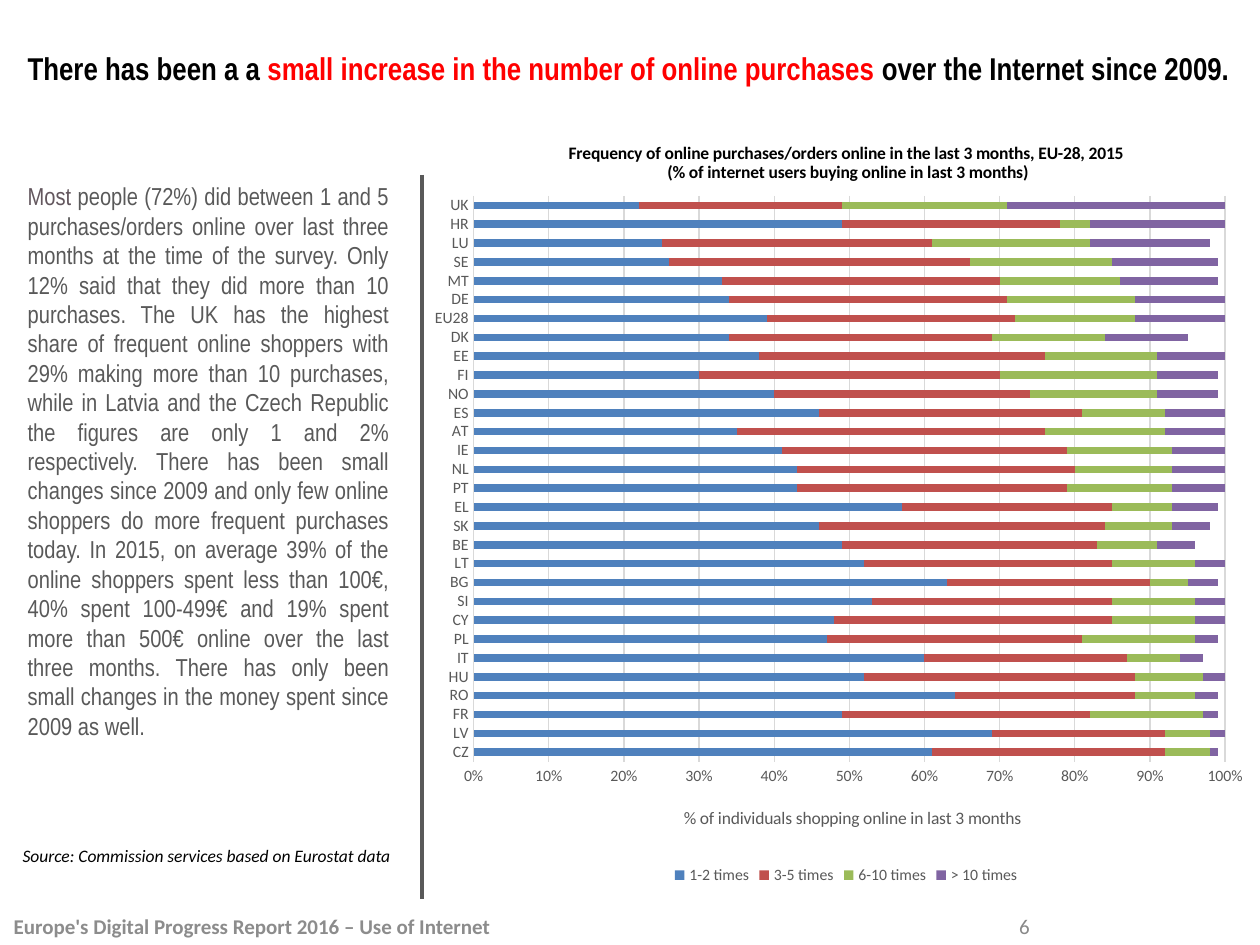
import pptx
import pptx.chart.data
import pptx.dml.color
import pptx.enum.chart
import pptx.enum.shapes
import pptx.enum.text
import pptx.oxml
import pptx.oxml.ns
import pptx.util

Pt = pptx.util.Pt
qn = pptx.oxml.ns.qn
Align = pptx.enum.text.PP_ALIGN
Anchor = pptx.enum.text.MSO_ANCHOR

COLORS = {
    "black": "000000", "red": "FF0000", "warm": "63575E", "text": "595959",
    "grid": "D9D9D9", "foot": "8C8C8C", "page": "898989",
    "blue": "4F81BD", "brick": "C0504D", "green": "9BBB59", "plum": "8064A2",
}
NARROW, PLAIN = "Arial Narrow", "Calibri"

TITLE = [
    ("There has been a a ", "black"),
    ("small increase in the number of online purchases ", "red"),
    ("over the Internet since 2009.", "black"),
]
BODY = [
    ("Most", "warm"),
    (" people (72%) did between 1 and 5 purchases/orders online over last three "
     "months at the time of the survey. Only 12% said that they did more than 10 "
     "purchases. The UK has the highest share of frequent online shoppers with 29% "
     "making more than 10 purchases, while in Latvia and the Czech Republic the "
     "figures are only 1 and 2% respectively. There has been small changes since "
     "2009 and only few online shoppers do more frequent purchases today. In 2015, "
     "on average 39% of the online shoppers spent less than 100€, 40% spent "
     "100-499€ and 19% spent more than 500€ online over the last three months. "
     "There has only been small changes in the money spent since 2009 as well.",
     "text"),
]
SOURCE = "Source: Commission services based on Eurostat data"
FOOTER = "Europe's Digital Progress Report 2016 – Use of Internet"
HEADING = ("Frequency of online purchases/orders online in the last 3 months, "
           "EU-28, 2015 \n(% of internet users buying online in last 3 months)")
AXIS = "% of individuals shopping online in last 3 months"

# Country, then the percent of shoppers in each of the four series
SERIES = [("1-2 times", "blue"), ("3-5 times", "brick"),
          ("6-10 times", "green"), ("> 10 times", "plum")]
SHARES = [
    ("CZ", 61, 31, 6, 1), ("LV", 69, 23, 6, 2), ("FR", 49, 33, 15, 2),
    ("RO", 64, 24, 8, 3), ("HU", 52, 36, 9, 3), ("IT", 60, 27, 7, 3),
    ("PL", 47, 34, 15, 3), ("CY", 48, 37, 11, 4), ("SI", 53, 32, 11, 4),
    ("BG", 63, 27, 5, 4), ("LT", 52, 33, 11, 4), ("BE", 49, 34, 8, 5),
    ("SK", 46, 38, 9, 5), ("EL", 57, 28, 8, 6), ("PT", 43, 36, 14, 7),
    ("NL", 43, 37, 13, 7), ("IE", 41, 38, 14, 7), ("AT", 35, 41, 16, 8),
    ("ES", 46, 35, 11, 8), ("NO", 40, 34, 17, 8), ("FI", 30, 40, 21, 8),
    ("EE", 38, 38, 15, 9), ("DK", 34, 35, 15, 11), ("EU28", 39, 33, 16, 12),
    ("DE", 34, 37, 17, 12), ("MT", 33, 37, 16, 13), ("SE", 26, 40, 19, 14),
    ("LU", 25, 36, 21, 16), ("HR", 49, 29, 4, 18), ("UK", 22, 27, 22, 29),
]


def color(name):
    return pptx.dml.color.RGBColor.from_string(COLORS[name])


def style(font, size, shade, face=PLAIN, bold=False, slant=False):
    font.size, font.name, font.bold, font.italic = Pt(size), face, bold, slant
    font.color.rgb = color(shade)


def place(shape, left, top, width, height):
    shape.left, shape.top = Pt(left), Pt(top)
    shape.width, shape.height = Pt(width), Pt(height)


def fill_holder(shape, parts, size, bold, anchor):
    """Write the colored parts as one justified paragraph without a bullet."""
    frame = shape.text_frame
    frame.word_wrap, frame.vertical_anchor = True, anchor
    frame.auto_size = pptx.enum.text.MSO_AUTO_SIZE.NONE
    para = frame.paragraphs[0]
    props = para._p.get_or_add_pPr()
    props.set("marL", "0")
    props.set("indent", "0")
    props.append(pptx.oxml.parse_xml(f'<a:buNone {pptx.oxml.ns.nsdecls("a")}/>'))
    para.alignment, para.space_before = Align.JUSTIFY, Pt(0)
    for text, shade in parts:
        run = para.add_run()
        run.text = text
        style(run.font, size, shade, NARROW, bold)
    return para


def add_label(slide, box, text, wrap=True, align=Align.LEFT,
              anchor=Anchor.MIDDLE, **look):
    frame = slide.shapes.add_textbox(*map(Pt, box)).text_frame
    frame.text = text
    frame.word_wrap, frame.vertical_anchor = wrap, anchor
    frame.paragraphs[0].alignment = align
    style(frame.paragraphs[0].runs[0].font, **look)


def set_layout(parent, index, **parts):
    """Fix a chart part's place, as fractions of the whole chart."""
    for old in parent.findall(qn("c:layout")):
        parent.remove(old)
    inner = '<c:layoutTarget val="inner"/>' if "w" in parts else ""
    modes = "".join(f'<c:{key}Mode val="edge"/>' for key in "xy")
    sizes = "".join(f'<c:{key} val="{val}"/>' for key, val in parts.items())
    parent.insert(index, pptx.oxml.parse_xml(
        f'<c:layout {pptx.oxml.ns.nsdecls("c")}><c:manualLayout>'
        f'{inner}{modes}{sizes}</c:manualLayout></c:layout>'))


def set_title(title, text, x, y, **look):
    title.text_frame.text = text
    for para in title.text_frame.paragraphs:
        for run in para.runs:
            style(run.font, **look)
    set_layout(title._element, 1, x=x, y=y)


def add_bars(slide):
    data = pptx.chart.data.CategoryChartData(number_format="0%")
    data.categories = [row[0] for row in SHARES]
    for col, (name, _) in enumerate(SERIES, 1):
        data.add_series(name, [row[col] / 100 for row in SHARES])
    kinds = pptx.enum.chart
    chart = slide.shapes.add_chart(
        kinds.XL_CHART_TYPE.BAR_STACKED, *map(Pt, (247, 60.5, 473, 447.8)), data).chart
    style(chart.font, 10, "black")
    chart.has_title = True
    set_title(chart.chart_title, HEADING, 0.16, 0.04,
              size=10, shade="black", bold=True)

    plot = chart.plots[0]
    plot.gap_width, plot.overlap, plot.vary_by_categories = 150, 100, False
    for bar, (_, shade) in zip(plot.series, SERIES):
        bar.format.fill.solid()
        bar.format.fill.fore_color.rgb = color(shade)
    set_layout(chart._chartSpace.chart.plotArea, 0, x=0.05, y=0.115, w=0.908, h=0.722)

    cat, val = chart.category_axis, chart.value_axis
    for axis in (cat, val):
        axis.major_tick_mark = axis.minor_tick_mark = kinds.XL_TICK_MARK.NONE
        style(axis.tick_labels.font, 9, "text")
    val.minimum_scale, val.maximum_scale, val.major_unit = 0, 1, 0.1
    val.tick_labels.number_format = "0%"
    val.tick_labels.number_format_is_linked = False
    val.format.line.fill.background()
    for line in (cat.format.line, val.major_gridlines.format.line):
        line.color.rgb, line.width = color("grid"), Pt(0.75)
    cat._element.find(qn("c:noMultiLvlLbl")).addprevious(pptx.oxml.parse_xml(
        f'<c:tickLblSkip {pptx.oxml.ns.nsdecls("c")} val="2"/>'))
    set_title(val.axis_title, AXIS, 0.3, 0.89, size=10, shade="text")

    chart.has_legend = True
    chart.legend.position = kinds.XL_LEGEND_POSITION.BOTTOM
    chart.legend.include_in_layout = False
    style(chart.legend.font, 9, "text")


def main():
    deck = pptx.Presentation()
    deck.slide_width, deck.slide_height = Pt(720), Pt(540)
    slide = deck.slides.add_slide(deck.slide_layouts[1])

    rule = slide.shapes.add_connector(
        pptx.enum.shapes.MSO_CONNECTOR.STRAIGHT, *map(Pt, (241.2, 100, 241.2, 514)))
    rule.line.color.rgb, rule.line.width = color("text"), Pt(2)
    rule._element.spPr.append(pptx.oxml.parse_xml(
        f'<a:effectLst {pptx.oxml.ns.nsdecls("a")}/>'))
    add_bars(slide)

    title, body = slide.shapes.title, slide.placeholders[1]
    place(title, 8.6, 8.6, 702.7, 57.6)
    fill_holder(title, TITLE, 18, True, Anchor.MIDDLE).line_spacing = 1.15
    place(body, 8.6, 100, 221, 414)
    fill_holder(body, BODY, 14, False, Anchor.TOP)

    add_label(slide, (5.8, 479.5, 226.8, 19.4), SOURCE, wrap=False,
              anchor=Anchor.TOP, size=10, shade="black", slant=True)
    add_label(slide, (0.7, 518.4, 448.6, 21.6), FOOTER,
              size=12, shade="foot", bold=True)
    add_label(slide, (563.8, 518.4, 43.2, 21.6), "6", align=Align.CENTER,
              size=12, shade="page")
    deck.save("out.pptx")


if __name__ == "__main__":
    main()
